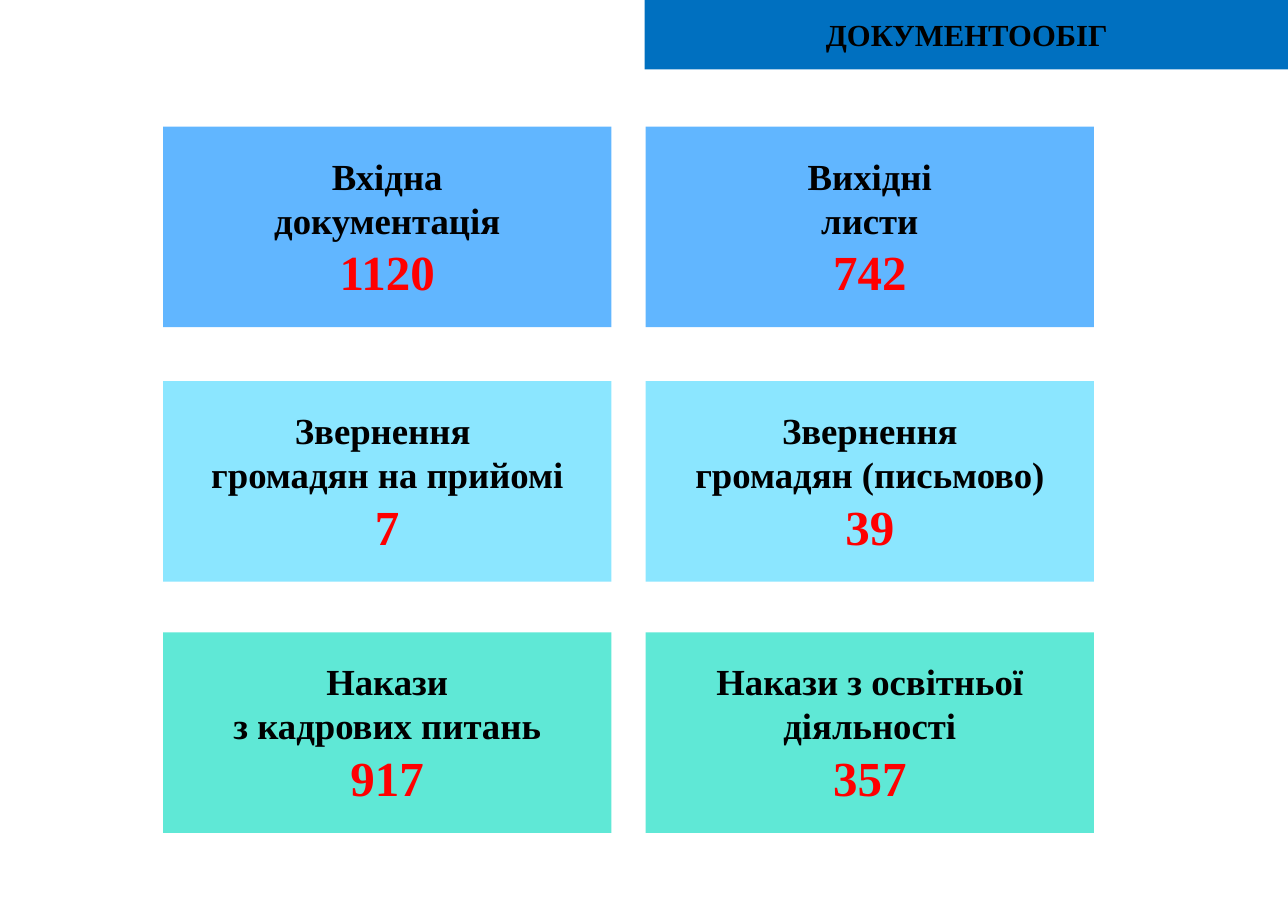
from pptx import Presentation
from pptx.dml.color import RGBColor
from pptx.enum.shapes import MSO_SHAPE
from pptx.enum.text import MSO_ANCHOR, PP_ALIGN
from pptx.util import Inches, Pt

COLORS = {
    "header": "0070C0",
    "letters": "61B6FF",
    "appeals": "8BE6FF",
    "orders": "5FE8D6",
    "text": "000000",
    "count": "FF0000",
}
FONT = "Times New Roman"
CARD_LEFTS = (1.48, 5.86)
CARD_WIDTH, CARD_HEIGHT = 4.07, 1.82

CARD_ROWS = [
    (1.15, "letters", [("Вхідна\nдокументація", "1120"),
                       ("Вихідні\nлисти", "742")]),
    (3.46, "appeals", [("Звернення \nгромадян на прийомі", "7"),
                       ("Звернення\nгромадян (письмово)", "39")]),
    (5.74, "orders", [("Накази\nз кадрових питань", "917"),
                      ("Накази з освітньої діяльності", "357")]),
]


def rgb(color):
    return RGBColor.from_string(COLORS[color])


def style_run(run, size, color):
    run.font.name = FONT
    run.font.size = Pt(size)
    run.font.bold = True
    run.font.color.rgb = rgb(color)


def add_panel(shapes, left, top, width, height, fill, text, size):
    panel = shapes.add_shape(MSO_SHAPE.RECTANGLE, Inches(left), Inches(top),
                             Inches(width), Inches(height))
    panel.shadow.inherit = False
    panel.fill.solid()
    panel.fill.fore_color.rgb = rgb(fill)
    panel.line.fill.background()
    frame = panel.text_frame
    frame.word_wrap = True
    frame.vertical_anchor = MSO_ANCHOR.MIDDLE
    paragraph = frame.paragraphs[0]
    paragraph.text = text
    paragraph.alignment = PP_ALIGN.CENTER
    for run in paragraph.runs:
        style_run(run, size, "text")
    return paragraph


def add_card(shapes, left, top, fill, label, count):
    paragraph = add_panel(shapes, left, top, CARD_WIDTH, CARD_HEIGHT, fill,
                          f"{label}\n{count}", 24)
    style_run(paragraph.runs[-1], 32, "count")


def main():
    prs = Presentation()
    prs.slide_width, prs.slide_height = Inches(11.69), Inches(8.27)
    slide = prs.slides.add_slide(prs.slide_layouts[6])

    add_panel(slide.shapes, 5.85, 0, 5.85, 0.63, "header", "ДОКУМЕНТООБІГ", 20)

    cards = slide.shapes.add_group_shape()
    for top, fill, row in CARD_ROWS:
        for left, (label, count) in zip(CARD_LEFTS, row):
            add_card(cards.shapes, left, top, fill, label, count)

    prs.save("out.pptx")


if __name__ == "__main__":
    main()
